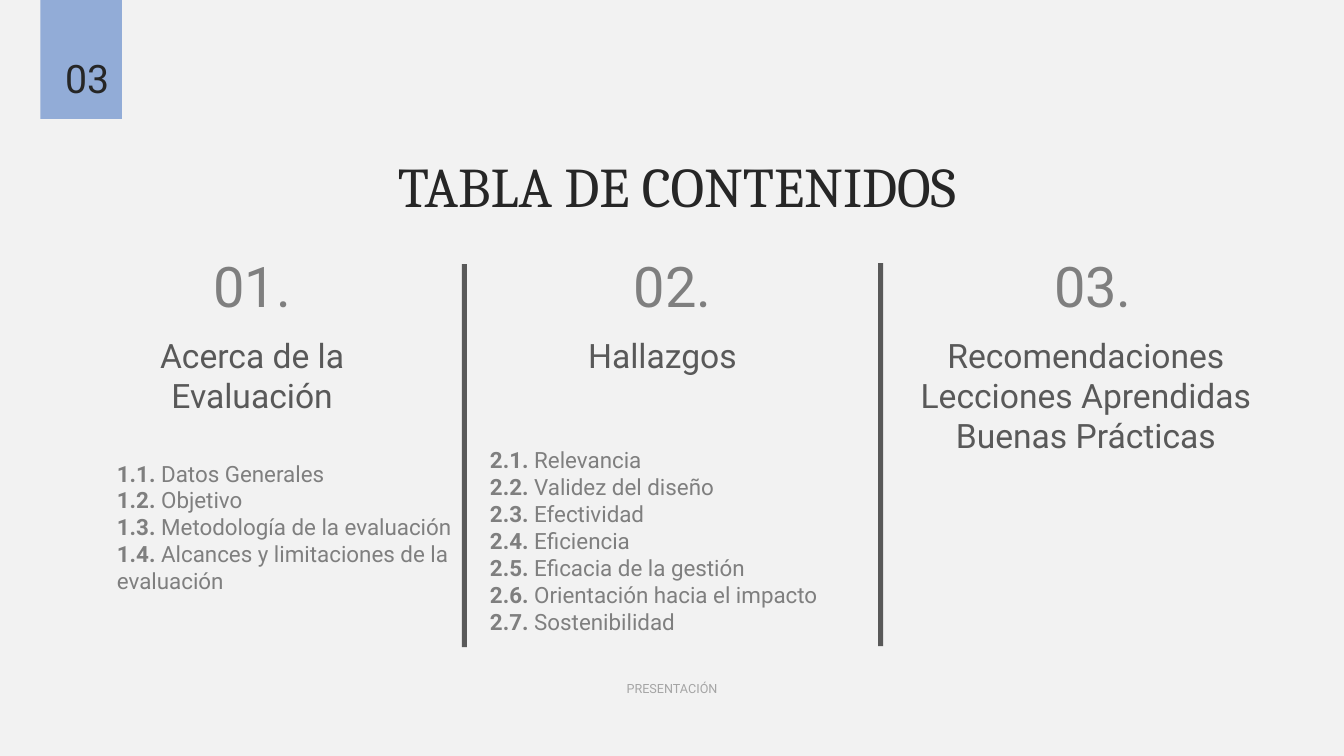
from dataclasses import dataclass

from pptx import Presentation
from pptx.dml.color import RGBColor
from pptx.enum.shapes import MSO_SHAPE
from pptx.enum.text import MSO_ANCHOR, MSO_AUTO_SIZE, PP_ALIGN
from pptx.util import Inches, Pt

RECTANGLE = MSO_SHAPE.RECTANGLE
TOP = MSO_ANCHOR.TOP
NO_AUTOFIT = MSO_AUTO_SIZE.NONE
LEFT, CENTER = PP_ALIGN.LEFT, PP_ALIGN.CENTER

WIDTH, HEIGHT = 13.33, 7.5
TWO_CONTENT = 3
PALE, BLUE, INK = "F2F2F2", "92ACD7", "262626"
DARK, GRAY, LIGHT = "595959", "7F7F7F", "A5A5A5"
SERIF, SANS = "Cambria", "Roboto"

COLUMN_PITCH = 4.17
FIRST_CENTER = 2.5
NUMBER_TOP, HEADING_TOP = 2.45, 3.27
DIVIDER_WIDTH, DIVIDER_HEIGHT = 0.05, 3.8


@dataclass
class Box:
    left: float
    top: float
    width: float
    height: float

    def inches(self):
        return [Inches(n) for n in (self.left, self.top, self.width, self.height)]


@dataclass
class Section:
    number: str
    heading: list
    heading_width: float
    heading_shift: float = 0


SECTIONS = [
    Section("01.", ["Acerca de la Evaluación"], 2.45),
    Section("02.", ["Hallazgos"], 2.81, -0.1),
    Section("03.", ["Recomendaciones", "Lecciones Aprendidas", "Buenas Prácticas"],
            3.72, -0.07),
]
TOPIC_LISTS = [
    (1, Box(1.06, 4.51, 3.54, 1.5),
     ["Datos Generales", "Objetivo", "Metodología de la evaluación",
      "Alcances y limitaciones de la evaluación"]),
    (2, Box(4.76, 4.38, 3.76, 2),
     ["Relevancia", "Validez del diseño", "Efectividad", "Eficiencia",
      "Eficacia de la gestión", "Orientación hacia el impacto", "Sostenibilidad"]),
]
DIVIDERS = [(4.58, 2.62), (8.71, 2.61)]


def color(hex_string):
    return RGBColor.from_string(hex_string)


def style(para, size, hex_string, font=SANS, align=CENTER):
    para.alignment = align
    para.space_before = Pt(0)
    para.font.size = Pt(size)
    para.font.name = font
    para.font.color.rgb = color(hex_string)


def prepare(shape, box):
    """Place a text shape and return its frame, wrapped and set from the top."""
    shape.left, shape.top, shape.width, shape.height = box.inches()
    frame = shape.text_frame
    frame.word_wrap = True
    frame.auto_size = NO_AUTOFIT
    frame.vertical_anchor = TOP
    return frame


def add_text(page, box, lines, size, hex_string):
    frame = prepare(page.shapes.add_textbox(*box.inches()), box)
    frame.text = "\n".join(lines)
    for para in frame.paragraphs:
        style(para, size, hex_string)


def add_block(page, box, hex_string):
    block = page.shapes.add_shape(RECTANGLE, *box.inches())
    block.shadow.inherit = False
    block.fill.solid()
    block.fill.fore_color.rgb = color(hex_string)
    block.line.fill.background()


def add_page_tag(page, box, number):
    add_block(page, box, BLUE)
    label = Box(box.left, box.top + 0.49, box.width + 0.12, 0.57)
    add_text(page, label, [number], 28, INK)


def fill_title(page, box, text):
    frame = prepare(page.shapes.title, box)
    frame.text = text
    style(frame.paragraphs[0], 40, INK, SERIF)


def add_section(page, center, section):
    add_text(page, Box(center - 0.59, NUMBER_TOP, 1.18, 0.8), [section.number], 40, GRAY)
    left = center + section.heading_shift - section.heading_width / 2
    height = 0.4 * len(section.heading) + 0.5
    add_text(page, Box(left, HEADING_TOP, section.heading_width, height),
             section.heading, 24, DARK)


def remove_bullet(para):
    properties = para._p.get_or_add_pPr()
    properties.set("marL", "0")
    properties.set("indent", "0")
    namespace = properties.tag.split("}")[0] + "}"
    properties.append(properties.makeelement(namespace + "buNone", {}))


def fill_topics(page, box, chapter, topics):
    frame = prepare(page.placeholders[chapter], box)
    for order, topic in enumerate(topics, 1):
        para = frame.paragraphs[0] if order == 1 else frame.add_paragraph()
        style(para, 16, GRAY, align=LEFT)
        remove_bullet(para)
        label = para.add_run()
        label.text = f"{chapter}.{order}. "
        label.font.bold = True
        para.add_run().text = topic


def build_contents(deck):
    page = deck.slides.add_slide(deck.slide_layouts[TWO_CONTENT])
    page.background.fill.solid()
    page.background.fill.fore_color.rgb = color(PALE)
    fill_title(page, Box(1.27, 1.45, 10.89, 0.77), "TABLA DE CONTENIDOS")
    for left, top in DIVIDERS:
        add_block(page, Box(left, top, DIVIDER_WIDTH, DIVIDER_HEIGHT), DARK)
    for column, section in enumerate(SECTIONS):
        add_section(page, FIRST_CENTER + column * COLUMN_PITCH, section)
    for chapter, box, topics in TOPIC_LISTS:
        fill_topics(page, box, chapter, topics)
    add_text(page, Box(4.76, 6.71, 3.81, 0.25), ["PRESENTACIÓN"], 9, LIGHT)
    add_page_tag(page, Box(0.4, 0, 0.81, 1.18), "03")


def main():
    deck = Presentation()
    deck.slide_width, deck.slide_height = Inches(WIDTH), Inches(HEIGHT)
    build_contents(deck)
    deck.save("out.pptx")


if __name__ == "__main__":
    main()
